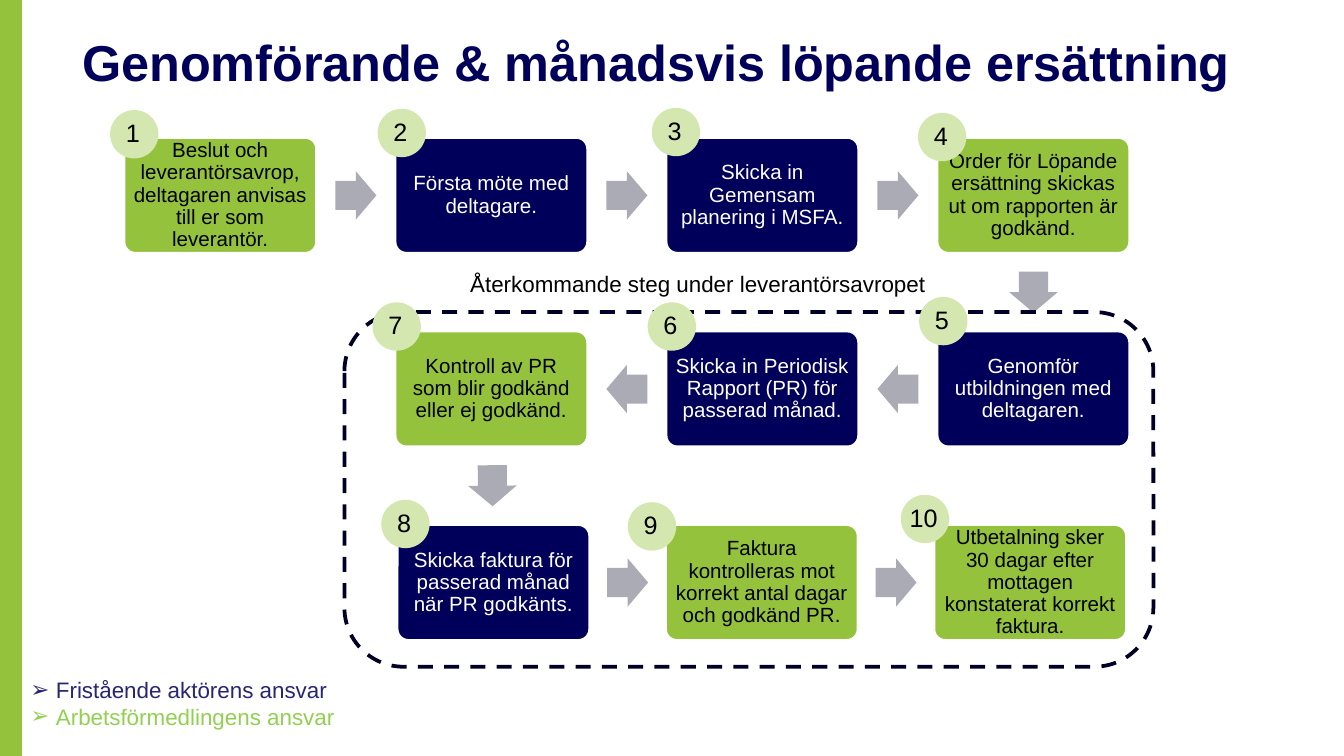
import math

from lxml import etree
from pptx import Presentation
from pptx import util as u
from pptx.dml.color import RGBColor
from pptx.enum import dml, shapes, text
from pptx.oxml.ns import qn

FONT = "Arial"
COLORS = {
    "navy": "00005A", "green": "95C23D", "pale": "D5E7B1", "arrow": "ABABB5",
    "frame": "000027", "white": "FFFFFF", "black": "000000",
    "legend_navy": "262673", "legend_green": "92D050",
}
TEXT_ON = {"navy": "white", "green": "black"}

# Grid of step boxes
BOX_W, BOX_H = 103.7, 62.6
LEFT, TOP = 66.2, 73.4
COL_PITCH, ROW_PITCH = 145.2, 103.7
LAST_ROW_LEFT, LAST_ROW_PITCH = 212.5, 143.8
BADGE = 25.9

# Column, row, responsible party, badge left and top, wording
STEPS = [
    (0, 0, "green", 59, 59, "Beslut och leverantörsavrop, deltagaren anvisas till er som leverantör."),
    (1, 0, "navy", 202.3, 58.3, "Första möte med deltagare."),
    (2, 0, "navy", 349.2, 57.8, "Skicka in Gemensam planering i MSFA."),
    (3, 0, "green", 491.8, 60.5, "Order för Löpande ersättning skickas ut om rapporten är godkänd."),
    (3, 1, "navy", 492.4, 159.1, "Genomför utbildningen med deltagaren."),
    (2, 1, "navy", 347, 162, "Skicka in Periodisk Rapport (PR) för passerad månad."),
    (1, 1, "green", 199.6, 162, "Kontroll av PR som blir godkänd eller ej godkänd."),
    (1, 2, "navy", 204.3, 267.8, "Skicka faktura för passerad månad när PR godkänts."),
    (2, 2, "green", 336.4, 269.1, "Faktura kontrolleras mot korrekt antal dagar och godkänd PR."),
    (3, 2, "green", 482.6, 265.1, "Utbetalning sker 30 dagar efter mottagen konstaterat korrekt faktura."),
]
LEGEND = [("Fristående aktörens ansvar", "legend_navy"),
          ("Arbetsförmedlingens ansvar", "legend_green")]


def rgb(name):
    return RGBColor.from_string(COLORS[name])


def add_run(p, content, size, color, bold=False):
    r = p.add_run()
    r.text = content
    r.font.name = FONT
    r.font.size = u.Pt(size)
    r.font.bold = bold
    r.font.color.rgb = rgb(color)


def set_margins(tf, left=0, top=0, right=0, bottom=0):
    tf.margin_left, tf.margin_top = u.Pt(left), u.Pt(top)
    tf.margin_right, tf.margin_bottom = u.Pt(right), u.Pt(bottom)


def add_shape(s, kind, x, y, w, h, fill=None, line=None, width=1):
    sp = s.shapes.add_shape(kind, u.Pt(x), u.Pt(y), u.Pt(w), u.Pt(h))
    sp.shadow.inherit = False
    if fill:
        sp.fill.solid()
        sp.fill.fore_color.rgb = rgb(fill)
    else:
        sp.fill.background()
    if line:
        sp.line.color.rgb = rgb(line)
        sp.line.width = u.Pt(width)
    else:
        sp.line.fill.background()
    return sp


def add_textbox(s, x, y, w, h, wrap):
    tf = s.shapes.add_textbox(u.Pt(x), u.Pt(y), u.Pt(w), u.Pt(h)).text_frame
    tf.word_wrap = wrap
    set_margins(tf, 7.2, 3.6, 7.2, 3.6)
    return tf


def centre_text(sp, content, size, color, spacing=1.0):
    tf = sp.text_frame
    tf.vertical_anchor = text.MSO_ANCHOR.MIDDLE
    p = tf.paragraphs[0]
    p.alignment = text.PP_ALIGN.CENTER
    p.line_spacing = spacing
    add_run(p, content, size, color)
    return tf


def step_origin(col, row):
    if row == 2:
        x = LAST_ROW_LEFT + (col - 1) * LAST_ROW_PITCH
    else:
        x = LEFT + col * COL_PITCH
    return x, TOP + row * ROW_PITCH


def add_step(s, col, row, owner, wording):
    x, y = step_origin(col, row)
    sp = add_shape(s, shapes.MSO_SHAPE.ROUNDED_RECTANGLE, x, y, BOX_W, BOX_H,
                   owner, "white", 2)
    sp.adjustments[0] = 0.1
    tf = centre_text(sp, wording, 11, TEXT_ON[owner], 0.9)
    tf.word_wrap = True
    set_margins(tf, 3.6, 3.6, 3.6, 3.6)


def add_flow_arrow(s, start, end):
    """Place an arrow midway between two steps, pointing at the second."""
    (x1, y1), (x2, y2) = step_origin(*start), step_origin(*end)
    w, h = 22, 25.9
    sp = add_shape(s, shapes.MSO_SHAPE.RIGHT_ARROW,
                   (x1 + x2 + BOX_W - w) / 2, (y1 + y2 + BOX_H - h) / 2,
                   w, h, "arrow")
    sp.adjustments[0] = 0.6
    sp.adjustments[1] = 0.5
    sp.rotation = math.degrees(math.atan2(y2 - y1, x2 - x1))


def add_badge(s, x, y, number):
    sp = add_shape(s, shapes.MSO_SHAPE.OVAL, x, y, BADGE, BADGE, "pale")
    tf = centre_text(sp, str(number), 13.5, "black")
    tf.word_wrap = False
    set_margins(tf, right=1.5, bottom=2)


def add_title(s, content):
    sp = s.shapes.title
    sp.left, sp.top, sp.width, sp.height = u.Pt(44), u.Pt(14), u.Pt(634), u.Pt(42)
    tf = sp.text_frame
    tf.word_wrap = True
    tf.vertical_anchor = text.MSO_ANCHOR.MIDDLE
    set_margins(tf)
    p = tf.paragraphs[0]
    p.alignment = text.PP_ALIGN.LEFT
    p.line_spacing = 0.9
    add_run(p, content, 27, "navy", bold=True)


def add_legend(s):
    tf = add_textbox(s, 9.4, 358.6, 255, 36, True)
    for i, (label, color) in enumerate(LEGEND):
        p = tf.paragraphs[0] if i == 0 else tf.add_paragraph()
        pPr = p._p.get_or_add_pPr()
        pPr.set("marL", str(u.Pt(13.5)))
        pPr.set("indent", str(u.Pt(-13.5)))
        etree.SubElement(pPr, qn("a:buFont")).set("typeface", FONT)
        etree.SubElement(pPr, qn("a:buChar")).set("char", "➢")
        add_run(p, label, 12, color)


def main():
    prs = Presentation()
    prs.slide_width, prs.slide_height = u.Pt(720), u.Pt(405)
    s = prs.slides.add_slide(prs.slide_layouts[5])

    # Side bar and title
    add_shape(s, shapes.MSO_SHAPE.RECTANGLE, 0, 0, 11.5, 405, "green", "green")
    add_title(s, "Genomförande & månadsvis löpande ersättning")

    # Process steps and the arrows between them
    for col, row, owner, _, _, wording in STEPS:
        add_step(s, col, row, owner, wording)
    for start, end in zip(STEPS, STEPS[1:]):
        add_flow_arrow(s, start[:2], end[:2])

    # Frame around the recurring steps
    frame = add_shape(s, shapes.MSO_SHAPE.ROUNDED_RECTANGLE,
                      184.5, 167.2, 433.4, 190, line="frame", width=2)
    frame.line.dash_style = dml.MSO_LINE.DASH
    tf = add_textbox(s, 244.8, 141.1, 260.6, 21.6, False)
    add_run(tf.paragraphs[0], "Återkommande steg under leverantörsavropet", 12, "black")

    # Step numbers
    for number, (_, _, _, x, y, _) in enumerate(STEPS, 1):
        add_badge(s, x, y, number)

    # Who is responsible
    add_legend(s)
    prs.save("out.pptx")


if __name__ == "__main__":
    main()
